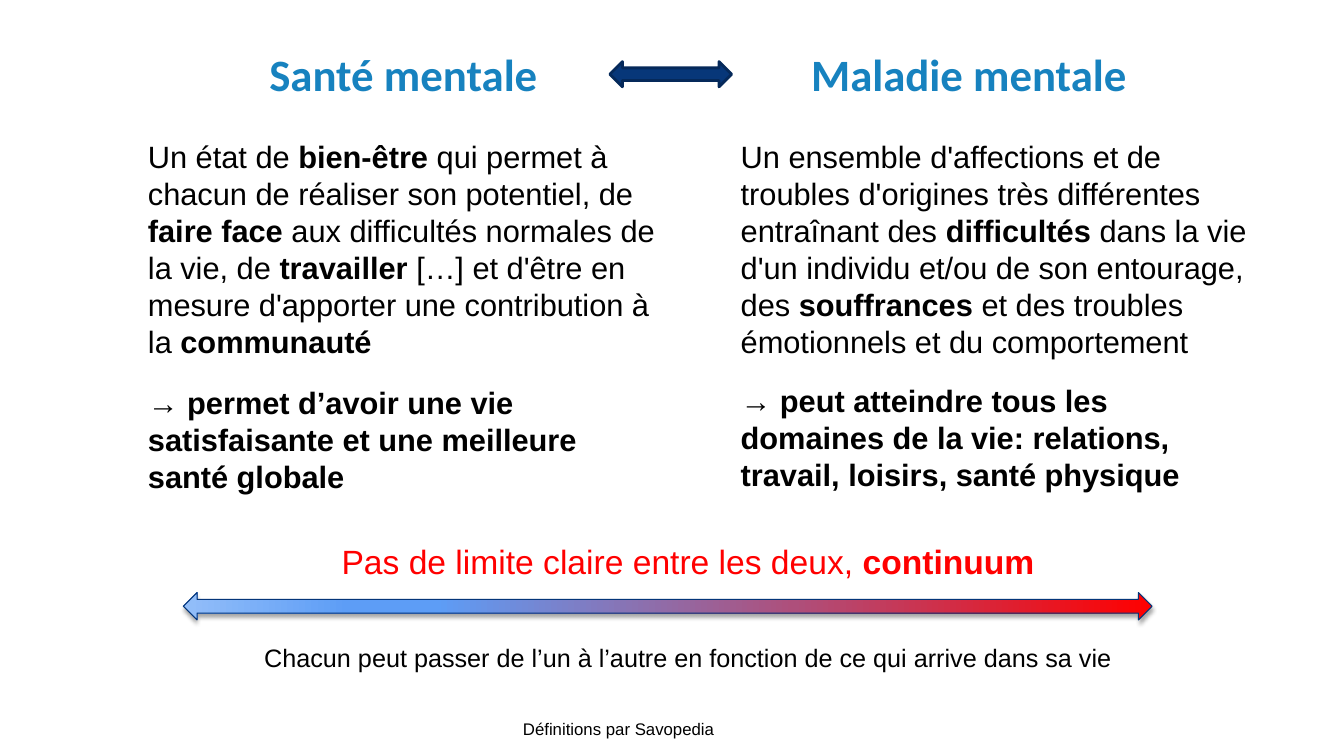
from dataclasses import dataclass

from lxml import etree
from pptx import Presentation
from pptx.dml.color import RGBColor
from pptx.enum.shapes import MSO_SHAPE
from pptx.enum.text import MSO_ANCHOR, PP_ALIGN
from pptx.oxml import parse_xml
from pptx.oxml.ns import nsdecls, qn
from pptx.util import Pt

DOUBLE_ARROW = MSO_SHAPE.LEFT_RIGHT_ARROW
MIDDLE = MSO_ANCHOR.MIDDLE
LEFT, CENTER = PP_ALIGN.LEFT, PP_ALIGN.CENTER


@dataclass(frozen=True)
class Theme:
    heading_font: str = "Calibri"
    text_font: str = "Arial"
    heading: str = "1782BF"
    text: str = "000000"
    alert: str = "FF0000"
    arrow_fill: str = "073779"
    arrow_line: str = "05295A"
    scale_line: str = "043579"
    scale_stops: tuple = ((0, "FF0000"), (37, "AE4F7B"), (74, "5D9DF6"),
                          (83, "5D9DF6"), (100, "93BEF9"))
    heading_size: int = 32
    definition_size: int = 22
    continuum_size: int = 24
    remark_size: int = 18
    source_size: int = 12


THEME = Theme()

HEALTH = (
    ("Un état de ", False), ("bien-être", True),
    (" qui permet à chacun de réaliser son potentiel, de ", False),
    ("faire face ", True),
    ("aux difficultés normales de la vie, de ", False),
    ("travailler ", True),
    ("[…] et d'être en mesure d'apporter une contribution à la ", False),
    ("communauté", True),
)
HEALTH_EFFECT = "→ permet d’avoir une vie satisfaisante et une meilleure santé globale"
ILLNESS = (
    ("Un ensemble d'affections et de troubles d'origines très différentes "
     "entraînant des ", False),
    ("difficultés", True),
    (" dans la vie d'un individu et/ou de son entourage, des ", False),
    ("souffrances", True),
    (" et des troubles émotionnels et du comportement ", False),
)
ILLNESS_EFFECT = ("→ peut atteindre tous les domaines de la vie: relations, "
                  "travail, loisirs, santé physique")


def add_runs(paragraph, runs, size, color, font=THEME.text_font):
    for wording, bold in runs:
        run = paragraph.add_run()
        run.text = wording
        run.font.name = font
        run.font.size = Pt(size)
        run.font.bold = bold
        run.font.color.rgb = RGBColor.from_string(color)


def add_text_frame(slide, left, top, width, height):
    frame = slide.shapes.add_textbox(Pt(left), Pt(top), Pt(width), Pt(height)).text_frame
    frame.word_wrap = True
    return frame


def add_double_arrow(slide, left, top, width, height, line_color, line_width):
    arrow = slide.shapes.add_shape(DOUBLE_ARROW, Pt(left), Pt(top), Pt(width), Pt(height))
    arrow.shadow.inherit = False
    arrow.line.color.rgb = RGBColor.from_string(line_color)
    arrow.line.width = Pt(line_width)
    return arrow


def headings(slide, left, top, width, height):
    title = slide.shapes.title
    title.left, title.top, title.width, title.height = map(Pt, (left, top, width, height))
    frame = title.text_frame
    frame.vertical_anchor = MIDDLE
    paragraph = frame.paragraphs[0]
    paragraph.alignment = LEFT
    tabs = etree.SubElement(paragraph._p.get_or_add_pPr(), qn("a:tabLst"))
    for center in (182.4, 586.4):
        etree.SubElement(tabs, qn("a:tab"), pos=str(Pt(center)), algn="ctr")
    add_runs(paragraph, (("\tSanté mentale\tMaladie mentale", True),),
             THEME.heading_size, THEME.heading, THEME.heading_font)
    link = add_double_arrow(slide, left + 337, top + 34.6, 87, 18, THEME.arrow_line, 2)
    link.fill.solid()
    link.fill.fore_color.rgb = RGBColor.from_string(THEME.arrow_fill)


def definition(slide, left, top, width, height, runs, effect, gap):
    frame = add_text_frame(slide, left, top, width, height)
    add_runs(frame.paragraphs[0], runs, THEME.definition_size, THEME.text)
    conclusion = frame.add_paragraph()
    conclusion.space_before = Pt(gap)
    add_runs(conclusion, ((effect, True),), THEME.definition_size, THEME.text)


def continuum(slide, left, top, width, height):
    frame = add_text_frame(slide, left, top, width, height)
    claim = frame.paragraphs[0]
    claim.alignment = CENTER
    add_runs(claim, (("Pas de limite claire entre les deux, ", False), ("continuum", True)),
             THEME.continuum_size, THEME.alert)
    remark = frame.add_paragraph()
    remark.alignment = CENTER
    remark.space_before = Pt(43.8)
    add_runs(remark, (("Chacun peut passer de l’un à l’autre en fonction de ce qui "
                       "arrive dans sa vie", False),), THEME.remark_size, THEME.text)

    scale = add_double_arrow(slide, left + 31.6, top + 40.2, 692, 19.6, THEME.scale_line, 0.75)
    stops = "".join(f'<a:gs pos="{position * 1000}"><a:srgbClr val="{color}"/></a:gs>'
                    for position, color in THEME.scale_stops)
    properties = scale._element.spPr
    properties.find(qn("a:ln")).addprevious(parse_xml(
        f'<a:gradFill {nsdecls("a")} rotWithShape="1"><a:gsLst>{stops}</a:gsLst>'
        '<a:lin ang="10800000" scaled="0"/></a:gradFill>'))
    properties.find(qn("a:effectLst")).append(parse_xml(
        f'<a:outerShdw {nsdecls("a")} blurRad="{Pt(3.1)}" dist="{Pt(1.8)}" dir="5400000" '
        'rotWithShape="0"><a:srgbClr val="000000"><a:alpha val="35000"/></a:srgbClr>'
        '</a:outerShdw>'))


def source(slide, left, top, width, height):
    frame = add_text_frame(slide, left, top, width, height)
    add_runs(frame.paragraphs[0], (("Définitions par Savopedia", False),),
             THEME.source_size, THEME.text)


def main():
    presentation = Presentation()
    presentation.slide_width, presentation.slide_height = Pt(960), Pt(540)
    slide = presentation.slides.add_slide(presentation.slide_layouts[5])
    headings(slide, 98.6, 9.4, 800.6, 87)
    columns = ((98.6, HEALTH, HEALTH_EFFECT, 17.2), (522, ILLNESS, ILLNESS_EFFECT, 15.8))
    for left, runs, effect, gap in columns:
        definition(slide, left, 95, 378, 280, runs, effect, gap)
    source(slide, 366.5, 509.8, 237.6, 21.6)
    continuum(slide, 99.4, 383, 784, 101.5)
    presentation.save("out.pptx")


if __name__ == "__main__":
    main()
